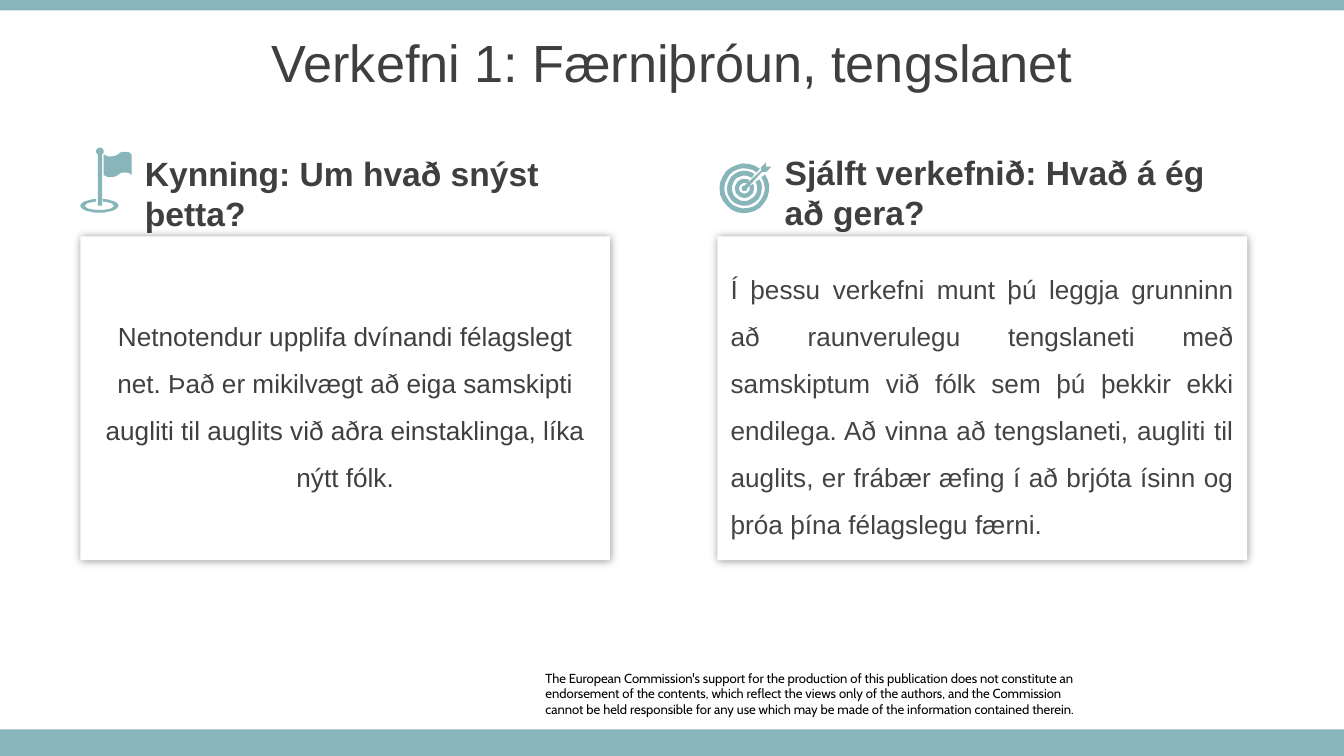
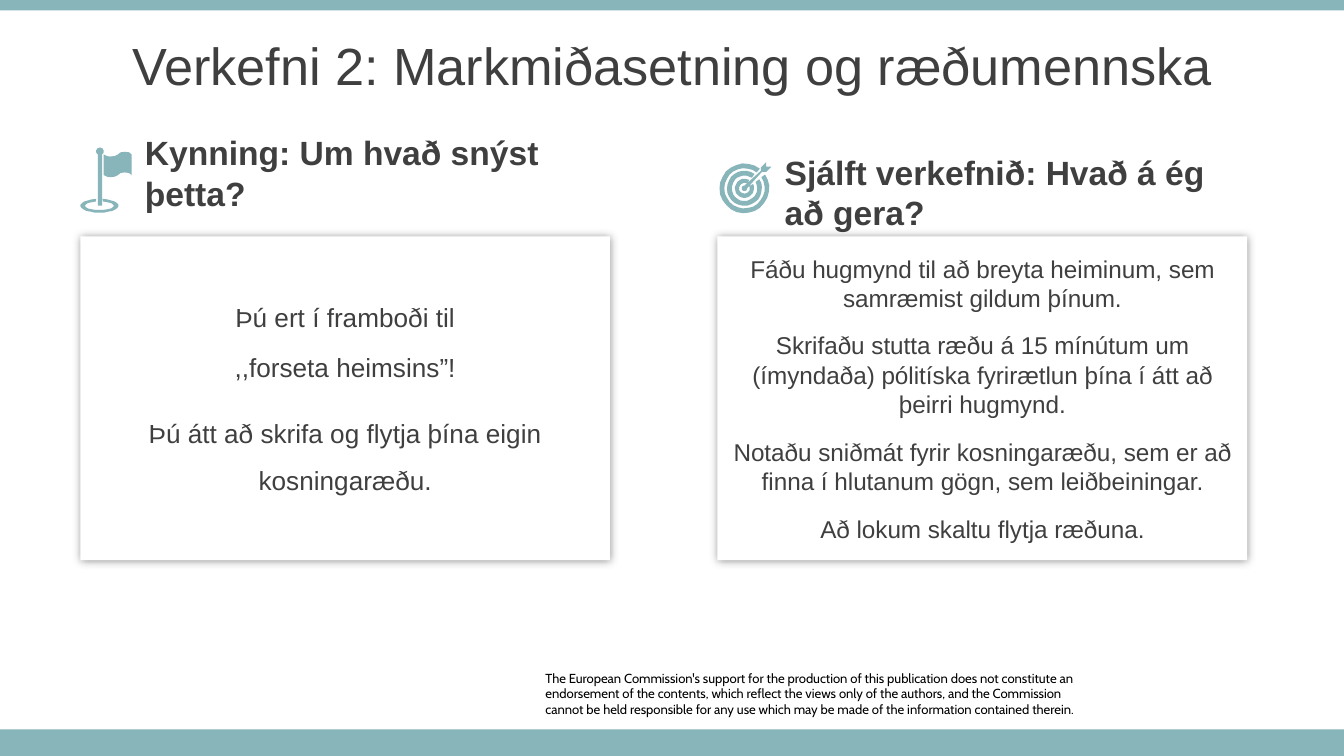
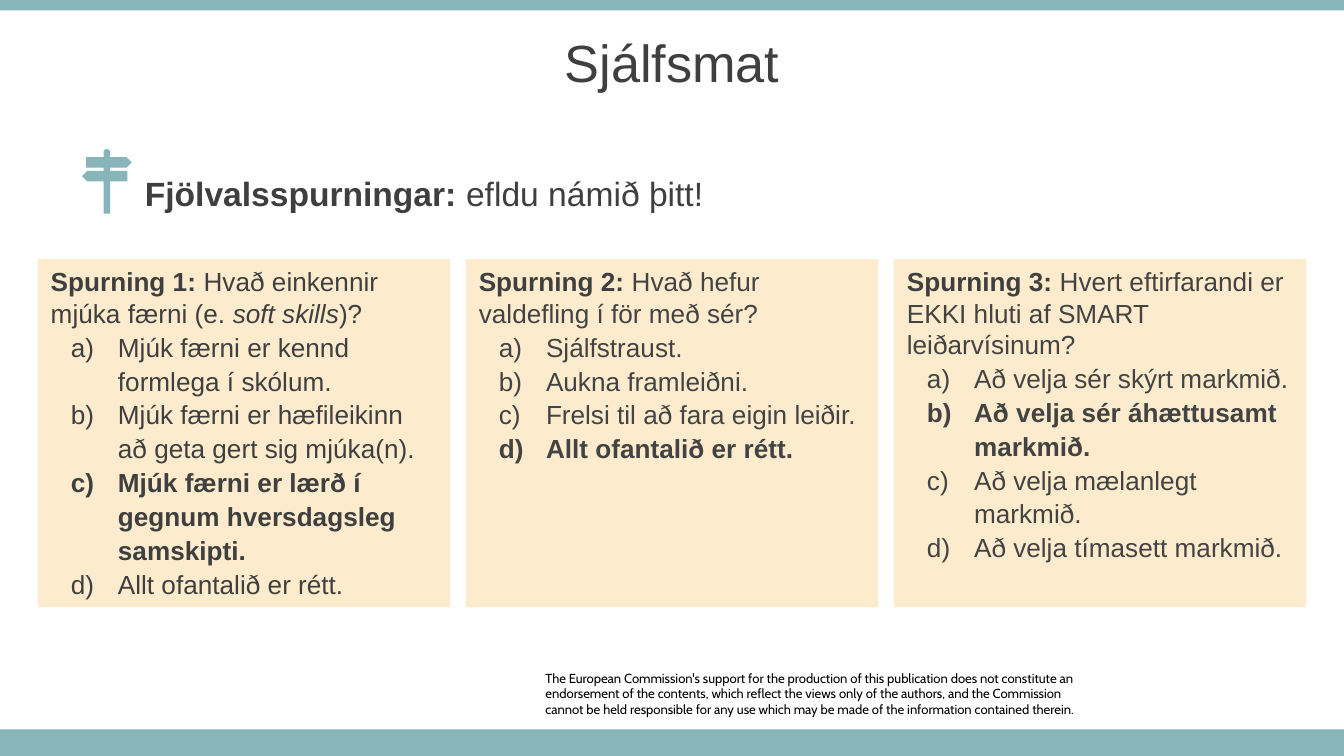
import math

import lxml.etree
import pptx
import pptx.dml.color
import pptx.enum.shapes
import pptx.enum.text
import pptx.oxml.ns
import pptx.util

Cm = pptx.util.Cm
Pt = pptx.util.Pt
RGBColor = pptx.dml.color.RGBColor
ALIGN = pptx.enum.text.PP_ALIGN
ANCHOR = pptx.enum.text.MSO_ANCHOR
qn = pptx.oxml.ns.qn

TEAL = RGBColor(0x87, 0xB5, 0xBA)
CREAM = RGBColor(0xFC, 0xEC, 0xCD)
WHITE = RGBColor(0xFF, 0xFF, 0xFF)
BLACK = RGBColor(0, 0, 0)
DARK = RGBColor(0x3F, 0x3F, 0x3F)
GREY = RGBColor(0x43, 0x43, 0x43)

PAGE_WIDTH, PAGE_HEIGHT = 25.4, 14.29
DISCLAIMER = [
    "The European Commission's support for the production of this publication does not "
    "constitute an endorsement of the contents, which reflect the views only of the "
    "authors, and the Commission",
    "cannot be held responsible for any use which may be made of the information "
    "contained therein.",
]


def add_box(page, left, top, width, height, lines=(), fill=None, size=14,
            color=DARK, align=ALIGN.LEFT, anchor=ANCHOR.MIDDLE, font="Arial"):
    """Add a box in cm; a line is a string or a list of (text, "b"/"i"/"") spans."""
    frame = [Cm(value) for value in (left, top, width, height)]
    if fill is None:
        box = page.shapes.add_textbox(*frame)
    else:
        box = page.shapes.add_shape(pptx.enum.shapes.MSO_SHAPE.RECTANGLE, *frame)
        box.shadow.inherit = False
        box.fill.solid()
        box.fill.fore_color.rgb = fill
        box.line.fill.background()
    text_frame = box.text_frame
    text_frame.word_wrap = True
    text_frame.vertical_anchor = anchor
    for number, line in enumerate(lines):
        paragraph = text_frame.add_paragraph() if number else text_frame.paragraphs[0]
        paragraph.alignment = align
        for text, style in [(line, "")] if isinstance(line, str) else line:
            span = paragraph.add_run()
            span.text = text
            span.font.name = font
            span.font.size = Pt(size)
            span.font.color.rgb = color
            span.font.bold = style == "b"
            span.font.italic = style == "i"
    return box


def arc(x, y, radius_x, radius_y, start, end):
    """Points along an ellipse, clockwise, with angles in degrees from the right."""
    angles = [math.radians(start + (end - start) * step / 24) for step in range(25)]
    return [(x + radius_x * math.cos(a), y + radius_y * math.sin(a)) for a in angles]


deck = pptx.Presentation()
deck.slide_width = Cm(PAGE_WIDTH)
deck.slide_height = Cm(PAGE_HEIGHT)

# Title, bands and disclaimer
titles = [
    ("Verkefni 1: Færniþróun, tengslanet", 0.36),
    ("Verkefni 2: Markmiðasetning og ræðumennska", 0.43),
    ("Sjálfsmat", 0.36),
]
pages = []
for title, title_top in titles:
    page = deck.slides.add_slide(deck.slide_layouts[6])
    pages.append(page)
    disclaimer = add_box(page, 10.31, 12.67, 10.59, 0.89, DISCLAIMER, size=7,
                         color=BLACK, anchor=ANCHOR.TOP, font="Cabin").text_frame
    disclaimer.margin_left = disclaimer.margin_right = 0
    disclaimer.margin_top = disclaimer.margin_bottom = 0
    add_box(page, 0, 13.79, PAGE_WIDTH, 0.5, fill=TEAL)
    add_box(page, 0, 0, PAGE_WIDTH, 0.2, fill=TEAL)
    add_box(page, 0, title_top, PAGE_WIDTH, 1.6, [title], size=28, align=ALIGN.CENTER)

# Icon outlines, in hundredths of a cm
wave = [(196, 292), (202, 295), (208, 296), (217, 295), (223, 292),
        (228, 288), (236, 287), (244, 288), (249, 292)]
flag = [
    arc(188, 389, 36, 13, -80, 260) + arc(188, 389, 27, 8, 256, -76),
    wave + [(x, y + 39) for x, y in reversed(wave)],
    arc(189, 286, 7, 7, 125, 415) + [(193, 389), (185, 389)],
]
target = [
    arc(1407, 356, outer, outer, gap - 43, 317 - gap)
    + arc(1407, 356, inner, inner, 317 - gap, gap - 43)
    for outer, inner, gap in [(18, 10, 18), (33, 24, 12), (47, 38, 9)]
]
target.append([(1448, 307), (1448, 315), (1458, 315), (1448, 325), (1440, 325)]
              + arc(1407, 356, 5, 5, 0, 270) + [(1438, 323), (1438, 317)])
signpost = [
    arc(202, 288, 6, 6, 180, 360)
    + [(208, 297), (239, 297), (249, 307), (239, 317), (208, 317), (208, 323),
       (241, 323), (241, 343), (208, 343), (208, 404), (196, 404), (196, 343),
       (165, 343), (155, 333), (165, 323), (196, 323), (196, 317), (163, 317),
       (163, 297), (196, 297)]
]
for page, icons in zip(pages, [(flag, target), (flag, target), (signpost,)]):
    for outlines in icons:
        builder = page.shapes.build_freeform(*outlines[0][0], scale=Cm(0.01))
        for number, points in enumerate(outlines):
            if number:
                builder.move_to(*points[0])
            builder.add_line_segments(points[1:], close=True)
        icon = builder.convert_to_shape()
        icon.shadow.inherit = False
        icon.fill.solid()
        icon.fill.fore_color.rgb = TEAL
        icon.line.fill.background()

# Task pages: introduction on the left, the task on the right
headings = [(2.49, "Kynning: Um hvað snýst þetta?"),
            (14.58, "Sjálft verkefnið: Hvað á ég að gera?")]
heading_tops = [(3.25, 3.23), (2.87, 3.23)]
for page, tops in zip(pages, heading_tops):
    for (left, heading), top in zip(headings, tops):
        add_box(page, left, top, 9.04, 0.79, [[(heading, "b")]], size=18)

INTRO_LEFT, TASK_LEFT = 1.52, 13.56
# page, left, size, colour, alignment, lines, line spacing of the last one
cards = [
    (pages[0], INTRO_LEFT, 14, DARK, ALIGN.CENTER, [
        "Netnotendur upplifa dvínandi félagslegt net. Það er mikilvægt að eiga samskipti "
        "augliti til auglits við aðra einstaklinga, líka nýtt fólk.",
    ], 1.5),
    (pages[0], TASK_LEFT, 14, GREY, ALIGN.JUSTIFY, [
        "Í þessu verkefni munt þú leggja grunninn að raunverulegu tengslaneti með "
        "samskiptum við fólk sem þú þekkir ekki endilega. Að vinna að tengslaneti, "
        "augliti til auglits, er frábær æfing í að brjóta ísinn og þróa þína "
        "félagslegu færni.",
    ], 1.5),
    (pages[1], INTRO_LEFT, 14, DARK, ALIGN.CENTER, [
        "Þú ert í framboði til",
        ",,forseta heimsins”!",
        "Þú átt að skrifa og flytja þína eigin kosningaræðu.",
    ], 1.5),
    (pages[1], TASK_LEFT, 13, DARK, ALIGN.CENTER, [
        "Fáðu hugmynd til að breyta heiminum, sem samræmist gildum þínum.",
        "Skrifaðu stutta ræðu á 15 mínútum um (ímyndaða) pólitíska fyrirætlun þína í átt "
        "að þeirri hugmynd.",
        "Notaðu sniðmát fyrir kosningaræðu, sem er að finna í hlutanum gögn, sem "
        "leiðbeiningar.",
        "Að lokum skaltu flytja ræðuna.",
    ], 1.0),
]
for page, left, size, color, align, lines, last_spacing in cards:
    card = add_box(page, left, 4.47, 10.01, 6.12, lines, WHITE, size, color, align)
    paragraphs = card.text_frame.paragraphs
    for paragraph in paragraphs[1:]:
        paragraph.space_before = Pt(10)
    paragraphs[-1].line_spacing = last_spacing
    effects = card._element.spPr.find(qn("a:effectLst"))
    shadow = lxml.etree.SubElement(effects, qn("a:outerShdw"), blurRad=str(Pt(5)),
                                   dist="0", dir="0", algn="ctr", rotWithShape="0")
    shade = lxml.etree.SubElement(shadow, qn("a:srgbClr"), val="000000")
    lxml.etree.SubElement(shade, qn("a:alpha"), val="40000")

# Self-assessment page
quiz = pages[2]
add_box(quiz, 2.49, 3.25, 16.99, 0.79,
        [[("Fjölvalsspurningar: ", "b"), ("efldu námið þitt!", "")]], size=18)

# question spans, option colour, options, index of the right one
questions = [
    ([("Spurning 1: ", "b"), ("Hvað einkennir mjúka færni (e. ", ""),
      ("soft skills", "i"), (")?", "")], DARK,
     ["Mjúk færni er kennd formlega í skólum.",
      "Mjúk færni er hæfileikinn að geta gert sig mjúka(n).",
      "Mjúk færni er lærð í gegnum hversdagsleg samskipti.",
      "Allt ofantalið er rétt."], 2),
    ([("Spurning 2: ", "b"), ("Hvað hefur valdefling í för með sér?", "")], GREY,
     ["Sjálfstraust.", "Aukna framleiðni.", "Frelsi til að fara eigin leiðir.",
      "Allt ofantalið er rétt."], 3),
    ([("Spurning 3: ", "b"),
      ("Hvert eftirfarandi er EKKI hluti af SMART leiðarvísinum?", "")], GREY,
     ["Að velja sér skýrt markmið.", "Að velja sér áhættusamt markmið.",
      "Að velja mælanlegt markmið.", "Að velja tímasett markmið."], 1),
]
for column, (question, color, options, right) in enumerate(questions):
    lines = [question] + [[(option, "b" if number == right else "")]
                          for number, option in enumerate(options)]
    panel = add_box(quiz, 0.71 + 8.09 * column, 4.9, 7.8, 6.58, lines, CREAM,
                    color=color, anchor=ANCHOR.TOP)
    first, *answers = panel.text_frame.paragraphs
    first.runs[0].font.color.rgb = DARK
    for answer in answers:
        properties = answer._p.get_or_add_pPr()
        properties.set("marL", str(Cm(1.27)))
        properties.set("indent", str(Cm(-0.89)))
        lxml.etree.SubElement(properties, qn("a:buAutoNum"), type="alphaLcParenR")
        answer.line_spacing = 1.08

deck.save("out.pptx")
